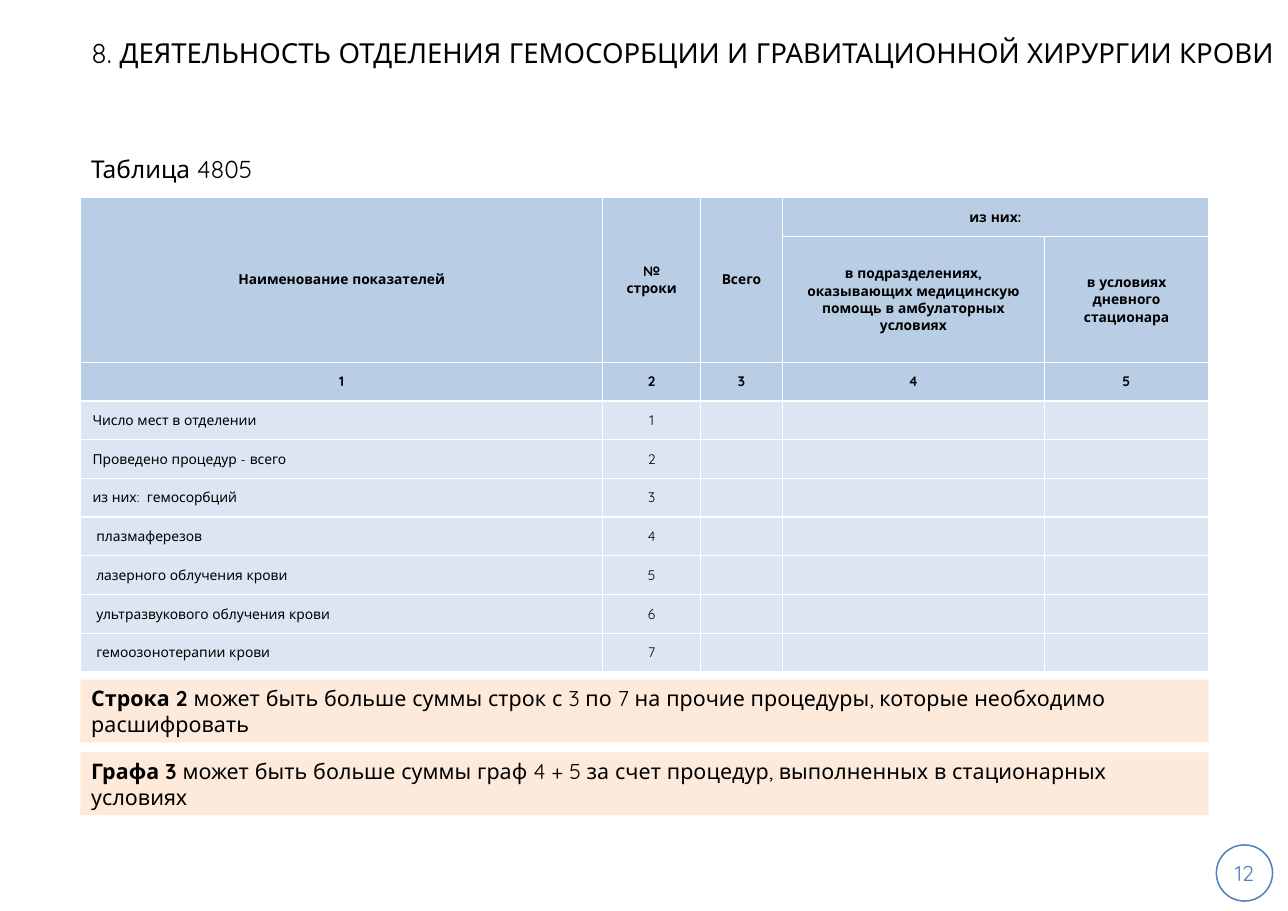
from lxml import etree
from pptx import Presentation
from pptx.dml.color import RGBColor
from pptx.enum.shapes import MSO_SHAPE
from pptx.enum.text import MSO_ANCHOR, MSO_AUTO_SIZE, PP_ALIGN
from pptx.oxml.ns import qn
from pptx.util import Inches, Pt

LEFT, CENTER = PP_ALIGN.LEFT, PP_ALIGN.CENTER
MIDDLE = MSO_ANCHOR.MIDDLE
NO_AUTOFIT = MSO_AUTO_SIZE.NONE
RECTANGLE, OVAL = MSO_SHAPE.RECTANGLE, MSO_SHAPE.OVAL
TITLE_ONLY = 5

FONT = "Quicksand"
BLACK, WHITE, BLUE = "000000", "FFFFFF", "4F81BD"
HEADER_FILL, BODY_FILL, NOTE_FILL = "B9CDE5", "DCE6F2", "FDEADA"

CONTENT_LEFT, CONTENT_WIDTH = 0.73, 10.24
COLUMN_WIDTHS = [4.74, 0.89, 0.74, 2.38, 1.49]
HEADER_HEIGHTS = [0.36, 1.14]
HEADER_ROWS = 3
ROWS = [
    ["Наименование показателей", "№\nстроки", "Всего", "из них:", ""],
    ["", "", "", "в подразделениях, оказывающих медицинскую помощь в амбулаторных условиях",
     "в условиях дневного стационара"],
    ["1", "2", "3", "4", "5"],
]
INDICATORS = [
    "Число мест в отделении",
    "Проведено процедур - всего",
    "из них:  гемосорбций",
    " плазмаферезов",
    " лазерного облучения крови",
    " ультразвукового облучения крови",
    " гемоозонотерапии крови",
]
ROWS += [[name, str(number), "", "", ""] for number, name in enumerate(INDICATORS, 1)]
MERGES = [((0, 0), (1, 0)), ((0, 1), (1, 1)), ((0, 2), (1, 2)), ((0, 3), (0, 4))]
NOTES = [
    ("Строка 2 ", "может быть больше суммы строк с 3 по 7 на прочие процедуры, "
                  "которые необходимо расшифровать"),
    ("Графа 3 ", "может быть больше суммы граф 4 + 5 за счет процедур, "
                 "выполненных в стационарных условиях"),
]


def color(hex_string):
    return RGBColor.from_string(hex_string)


def format_text(text_frame, size, align=LEFT, font_color=BLACK, bold=False):
    text_frame.word_wrap = True
    text_frame.vertical_anchor = MIDDLE
    for paragraph in text_frame.paragraphs:
        paragraph.alignment = align
        for run in paragraph.runs:
            run.font.name = FONT
            run.font.size = Pt(size)
            run.font.bold = bold
            run.font.color.rgb = color(font_color)


def add_title(slide, left, top, width, height):
    title = slide.shapes.title
    title.left, title.top = Inches(left), Inches(top)
    title.width, title.height = Inches(width), Inches(height)
    title.text_frame.text = "8. ДЕЯТЕЛЬНОСТЬ ОТДЕЛЕНИЯ ГЕМОСОРБЦИИ И ГРАВИТАЦИОННОЙ ХИРУРГИИ КРОВИ"
    title.text_frame.auto_size = NO_AUTOFIT
    format_text(title.text_frame, 18)


def add_caption(slide, left, top, width, height):
    caption = slide.shapes.add_textbox(Inches(left), Inches(top), Inches(width), Inches(height))
    caption.text_frame.text = "Таблица 4805"
    format_text(caption.text_frame, 16)


def add_cell_borders(cell):
    properties = cell._tc.get_or_add_tcPr()
    for side in ("lnL", "lnR", "lnT", "lnB"):
        line = etree.SubElement(properties, qn(f"a:{side}"), w=str(Pt(1)))
        fill = etree.SubElement(line, qn("a:solidFill"))
        etree.SubElement(fill, qn("a:srgbClr"), val=WHITE)


def format_cell(cell, text, is_header, align):
    cell.text_frame.text = text
    format_text(cell.text_frame, 9, align, bold=is_header)
    cell.vertical_anchor = MIDDLE
    side, edge = (0.08, 0.04) if is_header else (0.11, 0.06)
    cell.margin_left = cell.margin_right = Inches(side)
    cell.margin_top = cell.margin_bottom = Inches(edge)
    if not text:
        # The end mark keeps empty cells from stretching their row
        etree.SubElement(cell.text_frame.paragraphs[0]._p, qn("a:endParaRPr"), sz="900")
    add_cell_borders(cell)
    cell.fill.solid()
    cell.fill.fore_color.rgb = color(HEADER_FILL if is_header else BODY_FILL)


def add_indicator_table(slide, left, top, width, height):
    table = slide.shapes.add_table(len(ROWS), len(COLUMN_WIDTHS), Inches(left), Inches(top),
                                   Inches(width), Inches(height)).table
    for column, column_width in zip(table.columns, COLUMN_WIDTHS):
        column.width = Inches(column_width)
    plain_rows = len(ROWS) - len(HEADER_HEIGHTS)
    plain_height = (height - sum(HEADER_HEIGHTS)) / plain_rows
    for row, row_height in zip(table.rows, HEADER_HEIGHTS + [plain_height] * plain_rows):
        row.height = Inches(row_height)
    for row_index, texts in enumerate(ROWS):
        is_header = row_index < HEADER_ROWS
        for column_index, text in enumerate(texts):
            align = CENTER if is_header or column_index else LEFT
            format_cell(table.cell(row_index, column_index), text, is_header, align)
    for first, last in MERGES:
        table.cell(*first).merge(table.cell(*last))


def add_notes(slide, left, top, width, height, pitch):
    for index, (lead, explanation) in enumerate(NOTES):
        note = slide.shapes.add_shape(RECTANGLE, Inches(left), Inches(top + index * pitch),
                                      Inches(width), Inches(height))
        note.shadow.inherit = False
        note.fill.solid()
        note.fill.fore_color.rgb = color(NOTE_FILL)
        note.line.fill.background()
        paragraph = note.text_frame.paragraphs[0]
        for text in (lead, explanation):
            paragraph.add_run().text = text
        format_text(note.text_frame, 14)
        paragraph.runs[0].font.bold = True


def add_page_number(slide, left, top, size):
    badge = slide.shapes.add_shape(OVAL, Inches(left), Inches(top), Inches(size), Inches(size))
    badge.shadow.inherit = False
    badge.fill.background()
    badge.line.color.rgb = color(BLUE)
    badge.line.width = Pt(1)
    text_frame = badge.text_frame
    text_frame.margin_left = text_frame.margin_right = 0
    text_frame.margin_top = text_frame.margin_bottom = 0
    text_frame.text = "12"
    format_text(text_frame, 14, CENTER, BLUE)


def main():
    presentation = Presentation()
    presentation.slide_width, presentation.slide_height = Inches(11.69), Inches(8.27)
    slide = presentation.slides.add_slide(presentation.slide_layouts[TITLE_ONLY])
    add_page_number(slide, 11.04, 7.67, 0.51)
    add_title(slide, CONTENT_LEFT, 0, 10.97, 0.95)
    add_indicator_table(slide, CONTENT_LEFT, 1.79, CONTENT_WIDTH, 4.31)
    add_notes(slide, CONTENT_LEFT, 6.17, CONTENT_WIDTH, 0.57, pitch=0.66)
    add_caption(slide, CONTENT_LEFT, 1.3, CONTENT_WIDTH, 0.46)
    presentation.save("out.pptx")


if __name__ == "__main__":
    main()
